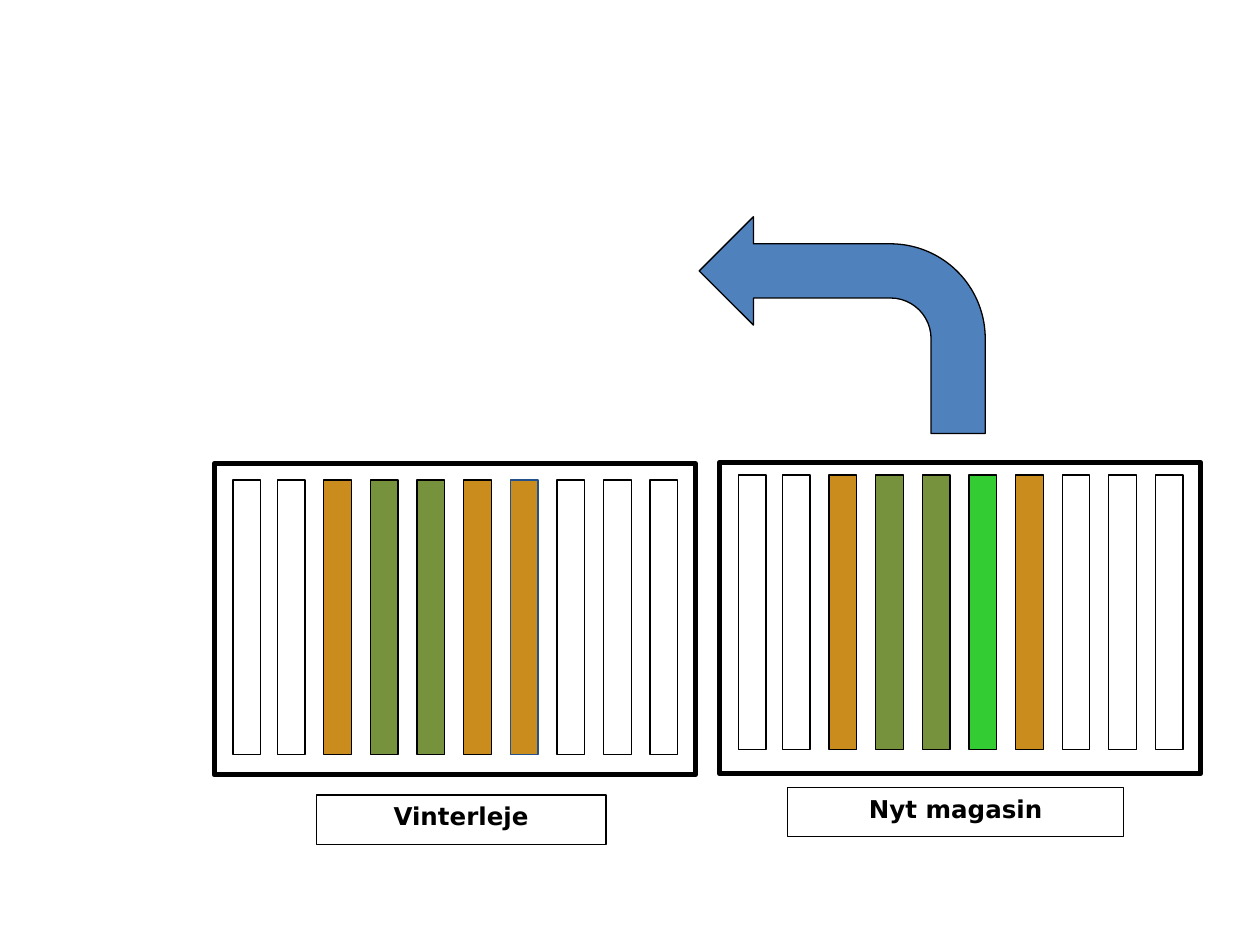
"""Draw two beehive boxes with coloured frames and an arrow between them."""
import pptx
import pptx.dml.color
import pptx.enum.shapes
import pptx.enum.text
import pptx.util

Inches = pptx.util.Inches
SHAPES = pptx.enum.shapes.MSO_SHAPE

COLORS = {
    "white": "FFFFFF",
    "black": "000000",
    "amber": "CA8C1C",
    "olive": "76923C",
    "green": "33CC33",
    "blue": "4F81BD",
    "navy": "23518B",
}


class HiveSlide:
    """Hold the style and the current slide."""

    font_name = "DejaVu Sans"
    font_size = 14
    frame_width = 0.22
    frame_height = 2.18
    frame_pitch = 0.37

    def __init__(self, slide):
        self.slide = slide

    def color(self, name):
        return pptx.dml.color.RGBColor.from_string(COLORS[name])

    def shape(self, kind, left, top, width, height, fill, line="black", weight=0.75):
        shape = self.slide.shapes.add_shape(
            kind, Inches(left), Inches(top), Inches(width), Inches(height)
        )
        shape.shadow.inherit = False
        if fill:
            shape.fill.solid()
            shape.fill.fore_color.rgb = self.color(fill)
        else:
            shape.fill.background()
        shape.line.color.rgb = self.color(line)
        shape.line.width = pptx.util.Pt(weight)
        return shape

    def box(self, left, top):
        return self.shape(SHAPES.RECTANGLE, left, top, 3.82, 2.47, "white", weight=3)

    def frames(self, box_left, top, fills, outlines):
        for index, fill in enumerate(fills):
            offset = 0.5 + (index - 1) * self.frame_pitch if index else 0.15
            self.shape(
                SHAPES.RECTANGLE, box_left + offset, top, self.frame_width,
                self.frame_height, fill, outlines.get(index, "black"),
            )

    def label(self, left, top, width, text):
        shape = self.shape(SHAPES.RECTANGLE, left, top, width, 0.39, "white")
        shape.text_frame.vertical_anchor = pptx.enum.text.MSO_ANCHOR.TOP
        paragraph = shape.text_frame.paragraphs[0]
        paragraph.text = text
        paragraph.alignment = pptx.enum.text.PP_ALIGN.CENTER
        paragraph.font.name = self.font_name
        paragraph.font.size = pptx.util.Pt(self.font_size)
        paragraph.font.bold = True
        paragraph.font.color.rgb = self.color("black")

    def arrow(self, left, top, width, height):
        shape = self.shape(SHAPES.BENT_ARROW, left, top, width, height, "blue")
        shape._element.spPr.xfrm.set("flipH", "1")


def main():
    presentation = pptx.Presentation()
    presentation.slide_width = Inches(10)
    presentation.slide_height = Inches(7.5)
    hive = HiveSlide(presentation.slides.add_slide(presentation.slide_layouts[6]))

    winter_fills = [None] * 2 + ["amber", "olive", "olive", "amber", "amber"] + [None] * 3
    hive.box(1.7, 3.68)
    hive.frames(1.7, 3.81, winter_fills, {6: "navy"})
    hive.label(2.51, 6.31, 2.3, "Vinterleje")

    new_fills = ["white"] * 2 + ["amber", "olive", "olive", "green", "amber"] + ["white"] * 3
    hive.box(5.71, 3.67)
    hive.frames(5.71, 3.77, new_fills, {})
    hive.label(6.25, 6.25, 2.67, "Nyt magasin")

    hive.arrow(5.55, 1.72, 2.27, 1.72)
    presentation.save("out.pptx")


if __name__ == "__main__":
    main()
